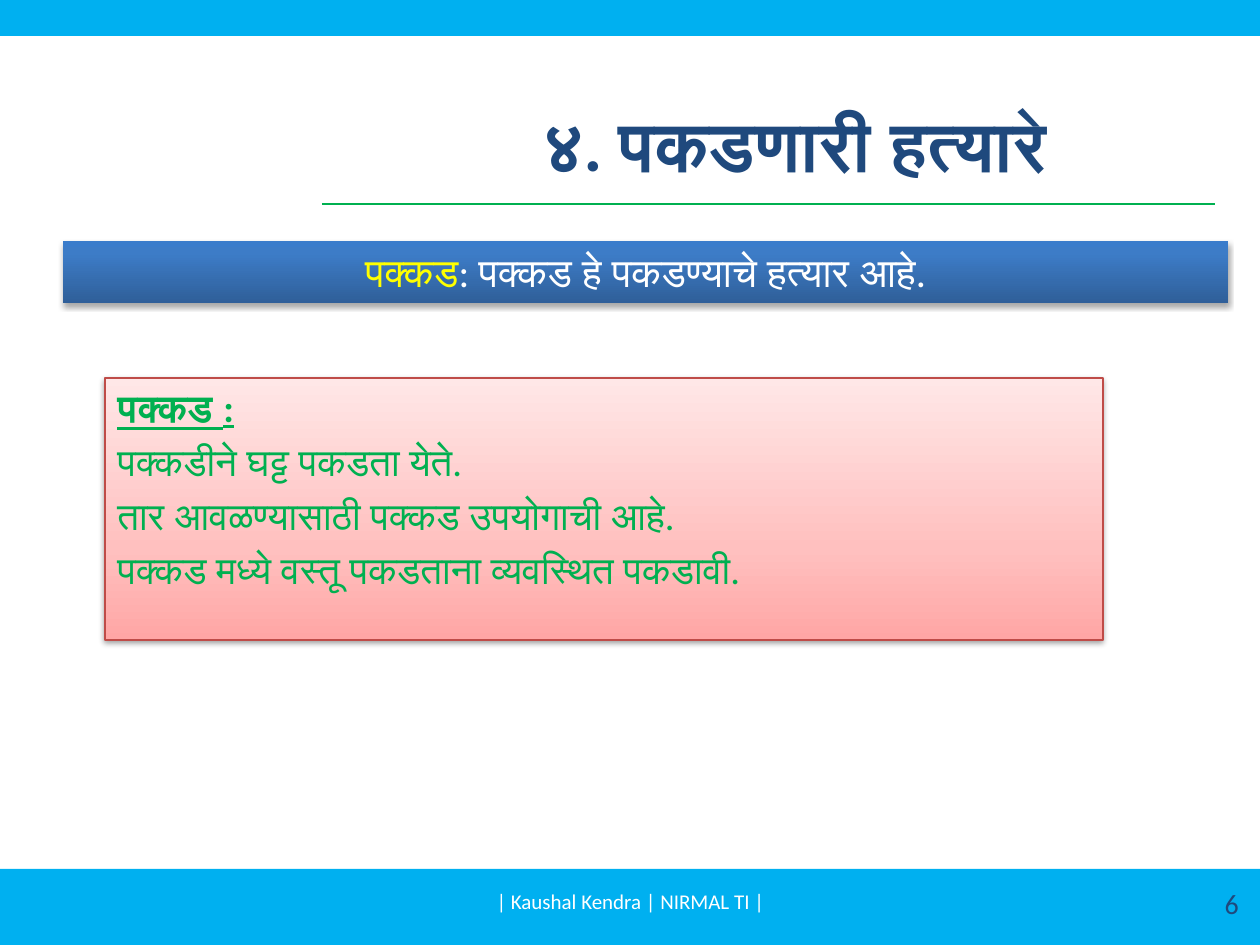
from lxml import etree
from pptx import Presentation
from pptx.dml.color import RGBColor
from pptx.enum.shapes import MSO_CONNECTOR, MSO_SHAPE
from pptx.enum.text import MSO_ANCHOR, PP_ALIGN
from pptx.oxml import parse_xml
from pptx.oxml.ns import nsdecls, qn
from pptx.util import Emu, Pt

PX = 914400 / 126
RECT = MSO_SHAPE.RECTANGLE
LEFT, CENTER, RIGHT = PP_ALIGN.LEFT, PP_ALIGN.CENTER, PP_ALIGN.RIGHT
TOP, MIDDLE = MSO_ANCHOR.TOP, MSO_ANCHOR.MIDDLE

SKY = RGBColor(0x00, 0xB0, 0xF0)
GREEN = RGBColor(0x00, 0xB0, 0x50)
NAVY = RGBColor(0x1F, 0x49, 0x7D)
RED = RGBColor(0xBF, 0x4C, 0x48)
YELLOW = RGBColor(0xFF, 0xFF, 0x00)
WHITE = RGBColor(0xFF, 0xFF, 0xFF)

prs = Presentation()
prs.slide_width, prs.slide_height = Emu(round(1260 * PX)), Emu(round(945 * PX))
slide = prs.slides.add_slide(prs.slide_layouts[6])
shapes = slide.shapes


def add_panel(box, fill=None, stops=(), line=None, shadow_alpha=0):
    """Rectangle with a plain fill, or a bottom-to-top gradient and a soft shadow."""
    panel = shapes.add_shape(RECT, *(Emu(round(n * PX)) for n in box))
    if stops:
        panel.fill.gradient()
        panel.fill.gradient_angle = 90
        stop_list = panel.fill._fill._gradFill.find(qn("a:gsLst"))
        for old_stop in list(stop_list):
            stop_list.remove(old_stop)
        for percent, color in stops:
            stop = etree.SubElement(stop_list, qn("a:gs"), pos=str(percent * 1000))
            etree.SubElement(stop, qn("a:srgbClr"), val=color)
    else:
        panel.fill.solid()
        panel.fill.fore_color.rgb = fill
    if line:
        panel.line.color.rgb = line
        panel.line.width = Pt(0.75)
    else:
        panel.line.fill.background()
    panel.shadow.inherit = False
    if shadow_alpha:
        panel._element.spPr.find(qn("a:effectLst")).append(parse_xml(
            f'<a:outerShdw {nsdecls("a")} blurRad="{Pt(3.1)}" dist="{Pt(1.7)}" '
            'dir="5400000" rotWithShape="0"><a:srgbClr val="000000">'
            f'<a:alpha val="{shadow_alpha * 1000}"/></a:srgbClr></a:outerShdw>'))
    return panel


def write_text(text, color, size, box=None, panel=None, align=CENTER, anchor=MIDDLE,
               bold=False, underline=False, same_line=False, before=0):
    """Write text in a new box or a panel, as a new paragraph or on the last line."""
    frame = (panel or shapes.add_textbox(*(Emu(round(n * PX)) for n in box))).text_frame
    frame.word_wrap = True
    frame.vertical_anchor = anchor
    paragraph = frame.paragraphs[-1]
    if paragraph.runs and not same_line:
        paragraph = frame.add_paragraph()
        paragraph.space_before = Pt(before)
    paragraph.alignment = align
    run = paragraph.add_run()
    run.text = text
    run.font.name = "Calibri"
    run.font.size = Pt(size)
    run.font.color.rgb = color
    run.font.bold = bold
    run.font.underline = underline


# Bands at the bottom and top, and the rule under the title
for band in ((0, 869, 1260, 76), (0, 0, 1260, 36)):
    add_panel(band, fill=SKY)
title_rule = shapes.add_connector(
    MSO_CONNECTOR.STRAIGHT, *(Emu(round(n * PX)) for n in (322, 204, 1215, 204)))
title_rule.line.color.rgb = GREEN
title_rule.line.width = Pt(0.75)
etree.SubElement(title_rule._element.spPr, qn("a:effectLst"))

# Title
write_text("४. पकडणारी हत्यारे", NAVY, 40, box=(294, 42, 1002, 203), bold=True)

# Notes on using the pliers
usage = add_panel((105, 378, 998, 262), line=RED, shadow_alpha=38,
                  stops=((0, "FFA6A5"), (35, "FFC0BF"), (100, "FFE7E7")))
write_text("पक्कड :", GREEN, 22, panel=usage, align=LEFT, anchor=TOP,
           bold=True, underline=True)
for note in ("पक्कडीने घट्ट पकडता येते.",
             "तार आवळण्यासाठी पक्कड उपयोगाची आहे.",
             "पक्कड मध्ये वस्तू पकडताना व्यवस्थित पकडावी."):
    write_text(note, GREEN, 22, panel=usage, align=LEFT, anchor=TOP, before=4.4)

# Slide number and footer
write_text("6", NAVY, 16, box=(958, 878, 293, 50), align=RIGHT)
write_text("| Kaushal Kendra | NIRMAL TI |", WHITE, 12, box=(431, 876, 399, 50))

# Definition bar
definition = add_panel((63, 241, 1165, 62), shadow_alpha=35,
                       stops=((0, "2F5F99"), (80, "3D7CC7"), (100, "3A7CCB")))
write_text("पक्कड", YELLOW, 23, panel=definition, anchor=TOP)
write_text(": पक्कड हे पकडण्याचे हत्यार आहे.", WHITE, 23, panel=definition,
           anchor=TOP, same_line=True)

prs.save("out.pptx")
